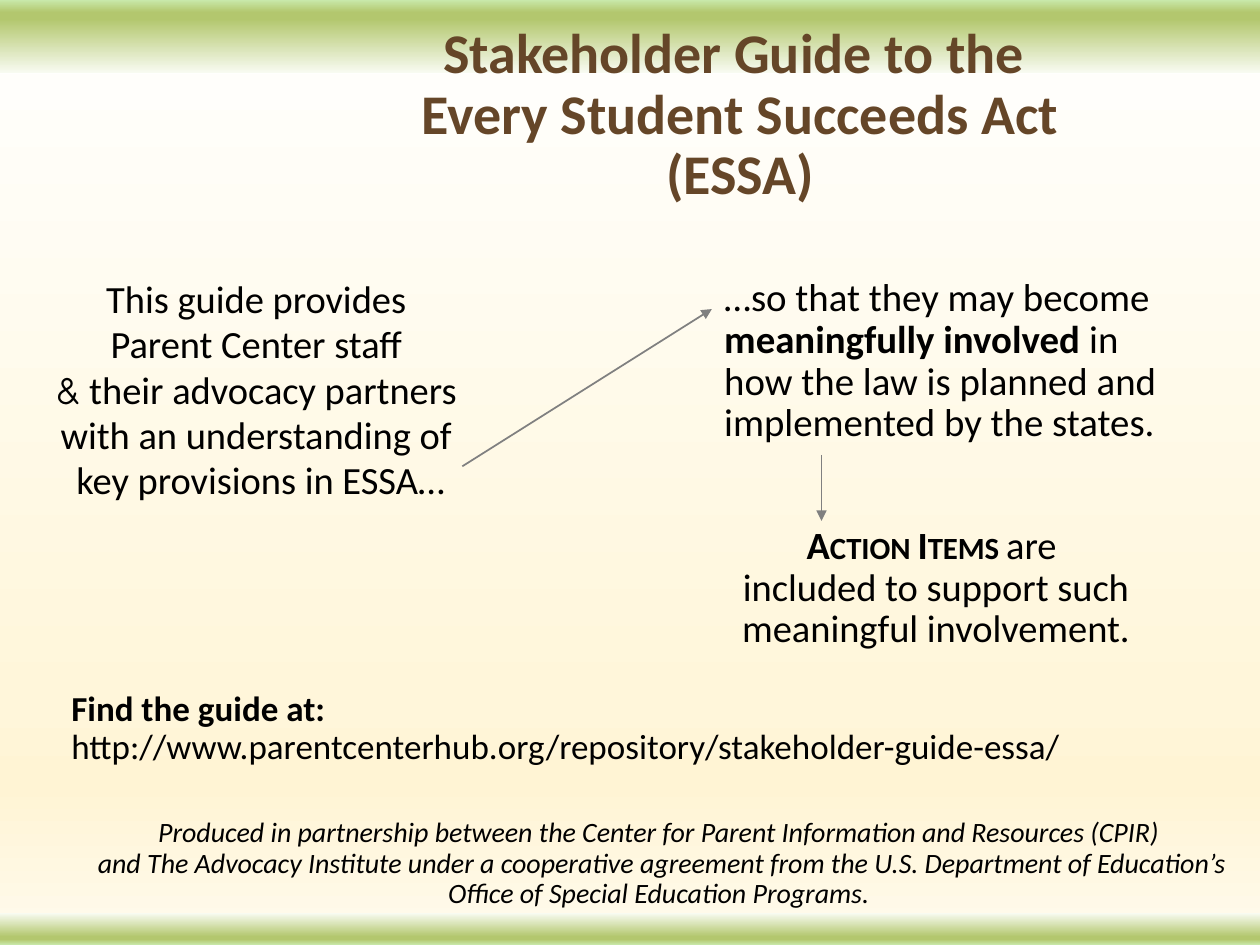
from lxml.etree import SubElement
from pptx import Presentation
from pptx.dml.color import RGBColor
from pptx.enum.shapes import MSO_CONNECTOR as Connector, MSO_SHAPE as Shape
from pptx.enum.text import MSO_ANCHOR as Anchor, PP_ALIGN as Align
from pptx.oxml.ns import qn
from pptx.util import Cm, Pt

COLORS = {"title": "654628", "body": "000000", "arrow": "808080"}
BACKGROUND_STOPS = [(0, "FFFFFF"), (74, "FFF6DA"), (83, "FFF4D4"), (100, "FFFBEE")]
BAND_STOPS = [(0, "F8FBF1"), (74, "B3C76E"), (83, "B3C76E"), (100, "C8E8AA")]
WIDTH, HEIGHT = 25.4, 19.05
BOLD, ITALIC, PLAIN = {"bold": True}, {"italic": True}, {}


def fill_gradient(fill, owner, stops, angle):
    """Fill with any number of stops; the angle runs counter-clockwise."""
    fill.gradient()
    fill.gradient_angle = angle
    stop_list = next(owner.iter(qn("a:gsLst")))
    for old_stop in list(stop_list):
        stop_list.remove(old_stop)
    for percent, color in stops:
        stop = SubElement(stop_list, qn("a:gs"), pos=str(percent * 1000))
        SubElement(stop, qn("a:srgbClr"), val=color)


def add_band(slide, box, angle):
    band = slide.shapes.add_shape(Shape.RECTANGLE, *map(Cm, box))
    band.shadow.inherit = False
    band.line.fill.background()
    fill_gradient(band.fill, band._element, BAND_STOPS, angle)


def add_text(slide, box, runs, size, align=Align.CENTER, color="body",
             spacing=0.9, anchor=Anchor.TOP):
    """Place one paragraph; runs are (text, font values), \\v breaks a line."""
    frame = slide.shapes.add_textbox(*map(Cm, box)).text_frame
    frame.word_wrap = True
    frame.vertical_anchor = anchor
    paragraph = frame.paragraphs[0]
    for name, value in {"alignment": align, "line_spacing": spacing,
                        "space_before": Pt(0)}.items():
        setattr(paragraph, name, value)
    for text, values in runs:
        for index, line in enumerate(text.split("\v")):
            if index:
                paragraph.add_line_break()
            if not line:
                continue
            run = paragraph.add_run()
            run.text = line
            font_values = {"name": "Calibri", "size": Pt(size), **values}
            small_caps = font_values.pop("small_caps", False)
            for name, value in font_values.items():
                setattr(run.font, name, value)
            run.font.color.rgb = RGBColor.from_string(COLORS[color])
            if small_caps:
                run.font._element.set("cap", "small")


def add_arrow(slide, start, end):
    arrow = slide.shapes.add_connector(Connector.STRAIGHT, *map(Cm, start + end))
    arrow.line.width = Pt(1)
    arrow.line.color.rgb = RGBColor.from_string(COLORS["arrow"])
    SubElement(arrow.line._get_or_add_ln(), qn("a:tailEnd"), type="triangle")
    SubElement(arrow._element.spPr, qn("a:effectLst"))


def add_backdrop(slide, width, height):
    fill_gradient(slide.background.fill, slide._element, BACKGROUND_STOPS, 270)
    top, bottom = 1.47, 0.64
    add_band(slide, (0, 0, width, top), 90)
    add_band(slide, (0, height - bottom, width, bottom), 270)


def add_title(slide, box):
    title = "Stakeholder Guide to the \vEvery Student Succeeds Act (ESSA)"
    add_text(slide, box, [(title, BOLD)], 32, color="title", anchor=Anchor.BOTTOM)


def add_purpose_flow(slide, box):
    """Draw the guide's purpose, the involvement it leads to and the actions."""
    left, top, width, height = box
    column = left + 14.05
    add_text(slide, (left, top, 9.91, 5), [
        ("This guide provides \vParent Center staff \v", PLAIN),
        ("&", {"name": "Comic Neue"}),
        (" their advocacy partners \vwith an understanding of \v"
         "key provisions in ESSA…", PLAIN),
    ], 22, spacing=0.98)
    add_text(slide, (column, top, 9.6, 4.24), [
        ("…so that they may become ", PLAIN),
        ("meaningfully involved ", BOLD),
        ("in how the law is planned and implemented by the states.", PLAIN),
    ], 22.2, Align.LEFT)
    add_text(slide, (column, top + height - 3.35, 9.04, 3.35), [
        ("Action Items ", {"bold": True, "small_caps": True}),
        ("are \vincluded to support such meaningful involvement.", PLAIN),
    ], 22)
    add_arrow(slide, (left + 9.02, top + 3.93), (column, top + 0.76))
    add_arrow(slide, (column + 2.21, top + 3.7), (column + 2.21, top + 5.03))


def add_address(slide, box):
    add_text(slide, box, [
        ("Find the guide at:\v", BOLD),
        ("http://www.parentcenterhub.org/repository/stakeholder-guide-essa/", PLAIN),
    ], 20, Align.LEFT)


def add_credit(slide, box):
    add_text(slide, box, [(
        "Produced in partnership between the Center for Parent Information "
        "and Resources (CPIR) \vand The Advocacy Institute under a cooperative "
        "agreement from the U.S. Department of Education’s Office of Special "
        "Education Programs. ", ITALIC)], 16)


def main():
    presentation = Presentation()
    presentation.slide_width, presentation.slide_height = Cm(WIDTH), Cm(HEIGHT)
    slide = presentation.slides.add_slide(presentation.slide_layouts[6])
    add_backdrop(slide, WIDTH, HEIGHT)
    add_title(slide, (6.91, 1.12, 16.03, 3.18))
    add_purpose_flow(slide, (0.3, 5.47, 23.65, 8.37))
    add_address(slide, (1.19, 13.82, 22.99, 2.41))
    add_credit(slide, (1.47, 16.38, 23.75, 2.62))
    presentation.save("out.pptx")


if __name__ == "__main__":
    main()
